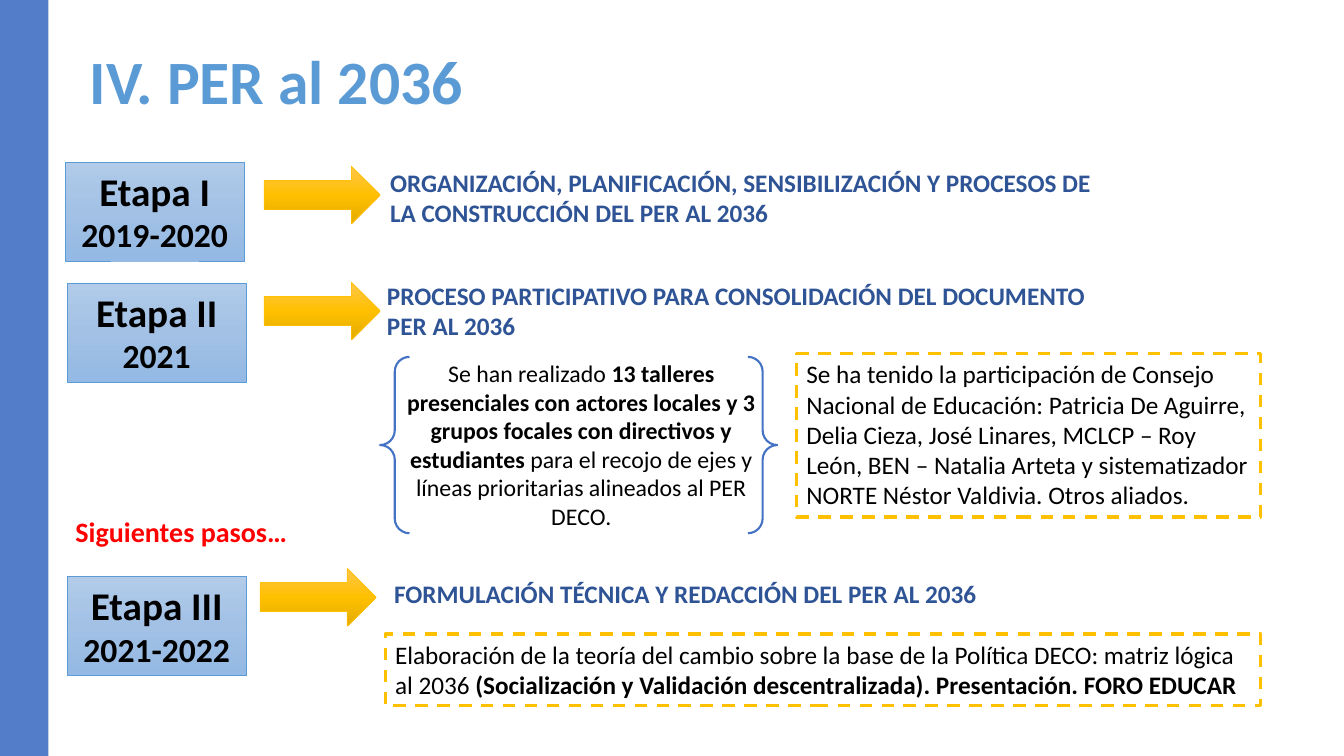
from copy import deepcopy

from pptx import Presentation
from pptx.dml.color import RGBColor
from pptx.enum.dml import MSO_LINE
from pptx.enum.shapes import MSO_SHAPE as Geo
from pptx.enum.text import MSO_ANCHOR as Anchor, MSO_AUTO_SIZE as Auto, PP_ALIGN as Align
from pptx.oxml.ns import qn
from pptx.util import Inches, Pt

BLACK = RGBColor(0x00, 0x00, 0x00)
RED = RGBColor(0xFF, 0x00, 0x00)
SKY = RGBColor(0x5B, 0x9B, 0xD5)
BAND = RGBColor(0x53, 0x7D, 0xC9)
BRACE = RGBColor(0x44, 0x72, 0xC4)
NAVY = RGBColor(0x2F, 0x54, 0x96)
GOLD = RGBColor(0xFF, 0xC0, 0x00)
GOLDS = [RGBColor(0xFF, 0xC6, 0x4B), GOLD, RGBColor(0xE3, 0xAB, 0x00)]
BLUES = [RGBColor(0xB1, 0xCB, 0xE9), RGBColor(0xA3, 0xC1, 0xE5), RGBColor(0x93, 0xB9, 0xE4)]

STAGES = [
    ("Etapa I", "2019-2020", (0.65, 1.61), (2.62, 1.65), (3.77, 1.61, 7.36, 0.71),
     "ORGANIZACIÓN, PLANIFICACIÓN, SENSIBILIZACIÓN Y PROCESOS DE LA CONSTRUCCIÓN DEL PER AL 2036"),
    ("Etapa II", "2021", (0.67, 2.81), (2.62, 2.8), (3.74, 2.73, 7.36, 0.71),
     "PROCESO PARTICIPATIVO PARA CONSOLIDACIÓN DEL DOCUMENTO PER AL 2036"),
    ("Etapa III", "2021-2022", (0.67, 5.72), (2.58, 5.64), (3.81, 5.69, 6.67, 0.4),
     "FORMULACIÓN TÉCNICA Y REDACCIÓN DEL PER AL 2036"),
]
SHOPS = [
    ("Se han realizado ", False),
    ("13 talleres presenciales con actores locales y 3 grupos focales con directivos y estudiantes ", True),
    ("para el recojo de ejes y líneas prioritarias alineados al PER DECO.", False),
]
ALLIES = [
    ("Se ha tenido la participación de Consejo Nacional de Educación: Patricia De Aguirre, "
     "Delia Cieza, José Linares, MCLCP – Roy León, BEN – Natalia Arteta y sistematizador "
     "NORTE Néstor Valdivia. Otros aliados.", False),
]
DRAFT = [
    ("Elaboración de la teoría del cambio sobre la base de la Política DECO: "
     "matriz lógica al 2036 ", False),
    ("(Socialización y Validación descentralizada). Presentación. FORO EDUCAR", True),
]


def assign(item, values):
    """Set each named attribute of an item."""
    for name, value in values.items():
        setattr(item, name, value)


def write(para, runs, size, color=BLACK, align=Align.LEFT):
    """Fill a paragraph with (text, bold) runs."""
    para.alignment = align
    for text, bold in runs:
        run = para.add_run()
        run.text = text
        assign(run.font, {"name": "Calibri", "size": Pt(size), "bold": bold})
        run.font.color.rgb = color


def add_text(slide, box, runs, size, color=BLACK, align=Align.LEFT, wrap=True):
    """Add a text box with one paragraph."""
    frame = slide.shapes.add_textbox(*map(Inches, box)).text_frame
    assign(frame, {"word_wrap": wrap, "auto_size": Auto.SHAPE_TO_FIT_TEXT})
    write(frame.paragraphs[0], runs, size, color, align)


def add_form(slide, kind, box, fill=None, line=None, width=0.5):
    """Add a flat preset shape; a list of colours makes a gradient."""
    form = slide.shapes.add_shape(kind, *map(Inches, box))
    form.shadow.inherit = False
    if isinstance(fill, list):
        shade(form, fill)
    elif fill is None:
        form.fill.background()
    else:
        form.fill.solid()
        form.fill.fore_color.rgb = fill
    if line is None:
        form.line.fill.background()
    else:
        form.line.color.rgb = line
        form.line.width = Pt(width)
    return form


def shade(form, colors):
    """Fill a shape with an even gradient from top to bottom."""
    form.fill.gradient()
    form.fill.gradient_angle = 270
    stops = form._element.spPr.find(qn("a:gradFill")).find(qn("a:gsLst"))
    for _ in colors[2:]:
        stops.insert(1, deepcopy(stops[0]))
    for rank, (stop, color) in enumerate(zip(form.fill.gradient_stops, colors)):
        stop.color.rgb = color
        stop.position = rank / (len(colors) - 1)


def add_stage(slide, name, years, spot, start, box, head):
    """Add a stage card with its arrow and heading."""
    card = add_form(slide, Geo.RECTANGLE, (*spot, 1.77, 0.98), BLUES, SKY)
    frame = card.text_frame
    assign(frame, {"word_wrap": True, "vertical_anchor": Anchor.TOP})
    write(frame.paragraphs[0], [(name, True)], 28, align=Align.CENTER)
    write(frame.add_paragraph(), [(years, True)], 24, align=Align.CENTER)
    add_form(slide, Geo.RIGHT_ARROW, (*start, 1.15, 0.57), GOLDS, GOLD)
    add_text(slide, box, [(head, True)], 18, NAVY)


def add_note(slide, box, runs):
    """Add a dashed gold box with text."""
    note = add_form(slide, Geo.RECTANGLE, box, line=GOLD, width=2.25)
    note.line.dash_style = MSO_LINE.DASH
    assign(note.text_frame, {"word_wrap": True, "vertical_anchor": Anchor.TOP})
    write(note.text_frame.paragraphs[0], runs, 18)


def set_title(slide, text):
    """Place and format the slide title."""
    title = slide.shapes.title
    assign(title, {"left": Inches(0.79), "top": Inches(0.43),
                   "width": Inches(11.5), "height": Inches(0.81)})
    assign(title.text_frame, {"word_wrap": True, "auto_size": Auto.NONE,
                              "vertical_anchor": Anchor.MIDDLE})
    para = title.text_frame.paragraphs[0]
    para.line_spacing = 0.9
    write(para, [(text, True)], 44, SKY)


def main():
    """Build and save the slide."""
    deck = Presentation()
    assign(deck, {"slide_width": Inches(13.33), "slide_height": Inches(7.5)})
    slide = deck.slides.add_slide(deck.slide_layouts[5])
    set_title(slide, "IV. PER al 2036")
    add_form(slide, Geo.RECTANGLE, (0, 0, 0.48, 7.5), BAND)
    add_form(slide, Geo.DOUBLE_BRACE, (3.77, 3.54, 3.94, 1.75), line=BRACE, width=1.5)
    add_text(slide, (3.82, 3.51, 3.89, 1.82), SHOPS, 17, align=Align.CENTER)
    for stage in STAGES:
        add_stage(slide, *stage)
    add_note(slide, (7.9, 3.51, 4.6, 1.62), ALLIES)
    add_text(slide, (0.65, 5.06, 2.32, 0.44), [("Siguientes pasos…", True)], 20, RED, wrap=False)
    add_note(slide, (3.82, 6.29, 8.68, 0.71), DRAFT)
    deck.save("out.pptx")


if __name__ == "__main__":
    main()
